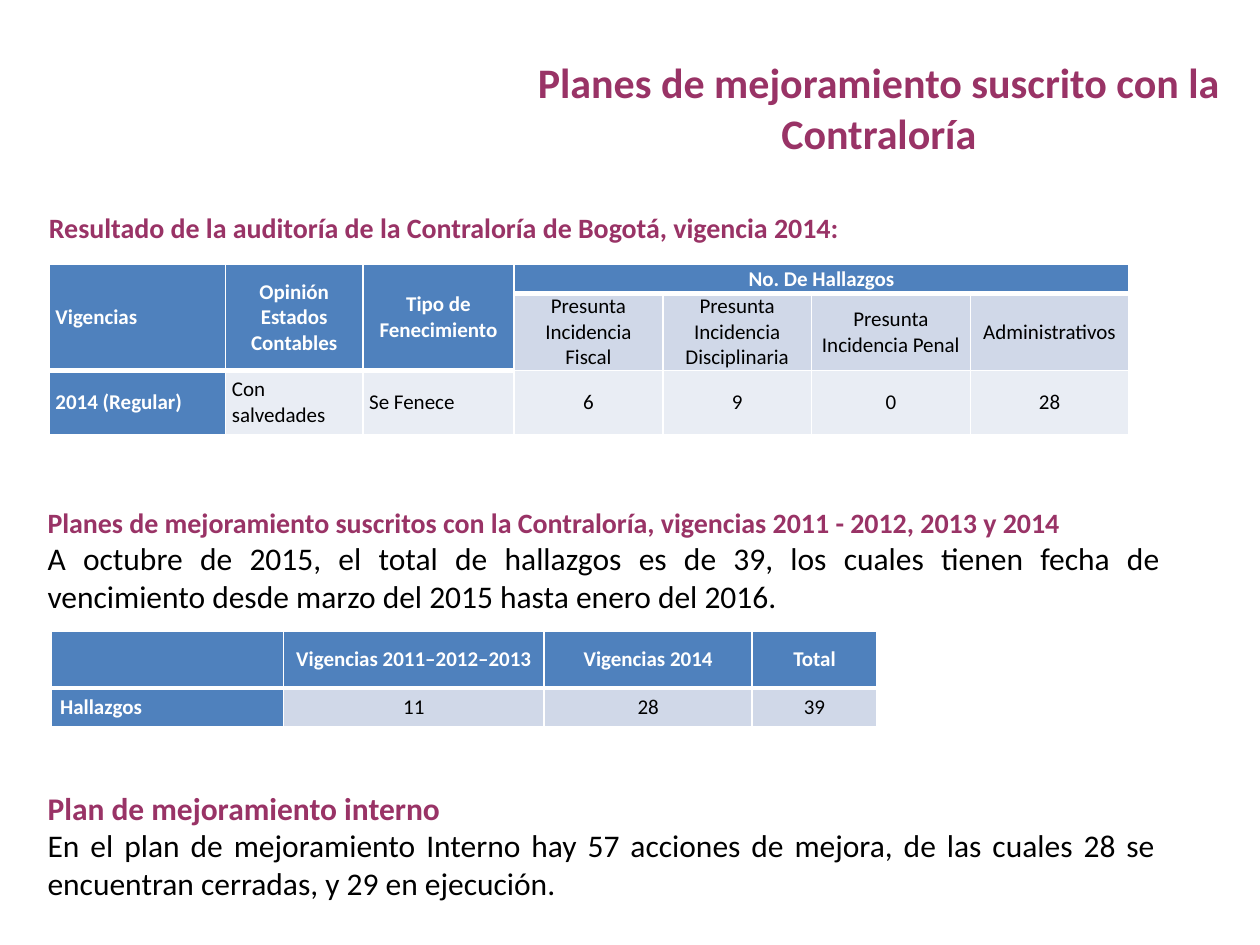
from lxml import etree
from pptx import Presentation
from pptx.dml.color import RGBColor
from pptx.enum.text import MSO_ANCHOR, MSO_AUTO_SIZE, PP_ALIGN
from pptx.oxml.ns import qn
from pptx.util import Pt

LEFT, CENTER, JUSTIFY = PP_ALIGN.LEFT, PP_ALIGN.CENTER, PP_ALIGN.JUSTIFY
TOP, MIDDLE = MSO_ANCHOR.TOP, MSO_ANCHOR.MIDDLE
NO_AUTOFIT = MSO_AUTO_SIZE.NONE

COLORS = {
    "plum": "993366",
    "black": "000000",
    "white": "FFFFFF",
    "blue": "4F81BD",
    "band": "D0D8E8",
    "pale": "E9EDF4",
}

TITLE = "Planes de mejoramiento suscrito con la Contraloría"
TITLE_BOX = (292.3, 28.8, 419.8, 65.5)

HEADING = {"color": "plum", "bold": True, "align": JUSTIFY}
BODY = {"size": 18, "align": JUSTIFY}
SECTIONS = [
    {"box": (20.9, 116.6, 623.5, 26.6), "anchor": MIDDLE, "paragraphs": [
        ("Resultado de la auditoría de la Contraloría de Bogotá, vigencia 2014:",
         {"size": 16, **HEADING}),
    ]},
    {"box": (20.1, 285.1, 650.2, 70.6), "anchor": TOP, "paragraphs": [
        ("Planes de mejoramiento suscritos con la Contraloría, "
         "vigencias 2011 - 2012, 2013 y 2014", {"size": 16, **HEADING}),
        ("A octubre de 2015, el total de hallazgos es de 39, los cuales tienen fecha de "
         "vencimiento desde marzo del 2015 hasta enero del 2016.", BODY),
    ]},
    {"box": (20.1, 447.1, 647.3, 72.7), "anchor": TOP, "paragraphs": [
        ("Plan de mejoramiento interno", {"size": 18, **HEADING}),
        ("En el plan de mejoramiento Interno hay 57 acciones de mejora, de las cuales 28 se "
         "encuentran cerradas, y 29 en ejecución.", BODY),
    ]},
]

# style: fill, text colour, bold, alignment, bottom border width
CELL_STYLES = {
    "head": ("blue", "white", True, CENTER, 3),
    "head left": ("blue", "white", True, LEFT, 3),
    "label": ("blue", "white", True, LEFT, 1),
    "band": ("band", "black", False, CENTER, 1),
    "pale": ("pale", "black", False, CENTER, 1),
    "pale left": ("pale", "black", False, LEFT, 1),
}
TABLES = [
    {
        "corner": (28.1, 151.2), "inset": 3.6,
        "widths": [100.8, 78.5, 86.4, 85, 85, 90.7, 90.7],
        "heights": [16.6, 43.2, 36.7],
        "merges": [(0, 0, 1, 0), (0, 1, 1, 1), (0, 2, 1, 2), (0, 3, 0, 6)],
        "rows": [
            [("Vigencias", "head left"), ("Opinión\nEstados Contables", "head"),
             ("Tipo de\nFenecimiento", "head"), ("No. De Hallazgos", "head")]
            + [("", "head")] * 3,
            [("", "head")] * 3
            + [("Presunta Incidencia Fiscal", "band"),
               ("Presunta Incidencia Disciplinaria", "band"),
               ("Presunta Incidencia Penal", "band"), ("Administrativos", "band")],
            [("2014 (Regular)", "label"), ("Con salvedades", "pale left"),
             ("Se Fenece", "pale left"), ("6", "pale"), ("9", "pale"),
             ("0", "pale"), ("28", "pale")],
        ],
    },
    {
        "corner": (29.5, 360.7), "inset": 4.9,
        "widths": [132.5, 149, 118.8, 71.3],
        "heights": [32.4, 22.3],
        "merges": [],
        "rows": [
            [("", "head"), ("Vigencias 2011–2012–2013", "head"),
             ("Vigencias 2014", "head"), ("Total", "head")],
            [("Hallazgos", "label"), ("11", "band"), ("28", "band"), ("39", "band")],
        ],
    },
]


def rgb(name):
    return RGBColor.from_string(COLORS[name])


def write(paragraph, text, size=12, color="black", bold=False, align=LEFT):
    paragraph.text = text
    paragraph.alignment = align
    font = paragraph.font
    font.name, font.size, font.bold = "Calibri", Pt(size), bold
    font.color.rgb = rgb(color)


def fill_frame(frame, paragraphs):
    for index, (text, style) in enumerate(paragraphs):
        write(frame.add_paragraph() if index else frame.paragraphs[0], text, **style)


def set_borders(cell, widths):
    properties = cell._tc.get_or_add_tcPr()
    for side, width in widths.items():
        line = etree.SubElement(properties, qn(f"a:ln{side}"), w=str(Pt(width)))
        solid = etree.SubElement(line, qn("a:solidFill"))
        etree.SubElement(solid, qn("a:srgbClr"), val=COLORS["white"])


def format_cell(cell, text, style, inset, top_width):
    fill, color, bold, align, bottom_width = CELL_STYLES[style]
    cell.vertical_anchor = MIDDLE
    cell.margin_left = cell.margin_right = Pt(inset)
    cell.margin_top = cell.margin_bottom = 0
    set_borders(cell, {"L": 1, "R": 1, "T": top_width, "B": bottom_width})
    cell.fill.solid()
    cell.fill.fore_color.rgb = rgb(fill)
    text_style = {"color": color, "bold": bold, "align": align}
    fill_frame(cell.text_frame, [(line, text_style) for line in text.split("\n")])


def add_findings_table(slide, content):
    rows, widths, heights = content["rows"], content["widths"], content["heights"]
    position = [Pt(v) for v in (*content["corner"], sum(widths), sum(heights))]
    table = slide.shapes.add_table(len(rows), len(widths), *position).table
    table.first_row = table.horz_banding = False
    for column, width in zip(table.columns, widths):
        column.width = Pt(width)
    for row, height in zip(table.rows, heights):
        row.height = Pt(height)
    for r, row in enumerate(rows):
        for c, (text, style) in enumerate(row):
            top_width = CELL_STYLES[rows[r - 1][c][1]][-1] if r else 1
            format_cell(table.cell(r, c), text, style, content["inset"], top_width)
    for first_row, first_column, last_row, last_column in content["merges"]:
        table.cell(first_row, first_column).merge(table.cell(last_row, last_column))


def add_section(slide, section):
    frame = slide.shapes.add_textbox(*map(Pt, section["box"])).text_frame
    frame.word_wrap = True
    frame.vertical_anchor = section["anchor"]
    fill_frame(frame, section["paragraphs"])


def main():
    """Build the slide on improvement plans and audit findings."""
    presentation = Presentation()
    presentation.slide_width, presentation.slide_height = Pt(720), Pt(540)
    slide = presentation.slides.add_slide(presentation.slide_layouts[5])
    title = slide.shapes.title
    title.left, title.top, title.width, title.height = map(Pt, TITLE_BOX)
    title.text_frame.auto_size = NO_AUTOFIT
    title.text_frame.vertical_anchor = TOP
    write(title.text_frame.paragraphs[0], TITLE,
          size=24, color="plum", bold=True, align=CENTER)
    for content in TABLES:
        add_findings_table(slide, content)
    for section in SECTIONS:
        add_section(slide, section)
    presentation.save("out.pptx")


if __name__ == "__main__":
    main()
